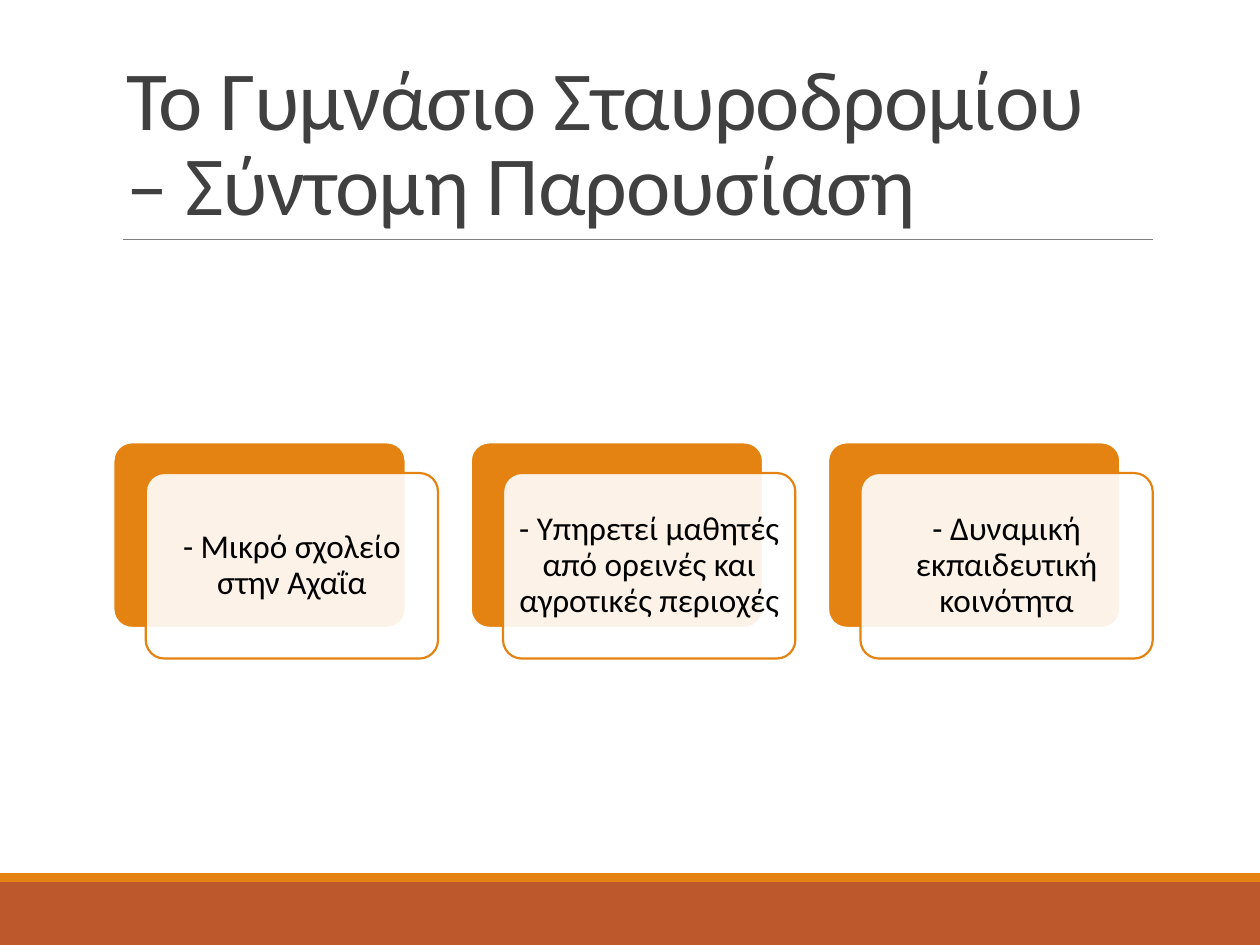
import pptx
import pptx.util
import pptx.dml.color
import pptx.enum.shapes
import pptx.enum.text
import pptx.oxml.ns
import lxml.etree

Pt = pptx.util.Pt
SHAPES = pptx.enum.shapes.MSO_SHAPE
ANCHOR = pptx.enum.text.MSO_ANCHOR
ALIGN = pptx.enum.text.PP_ALIGN

TITLE = "Το Γυμνάσιο Σταυροδρομίου\v– Σύντομη Παρουσίαση"
CARDS = [
    "- Μικρό σχολείο στην Αχαΐα",
    "- Υπηρετεί μαθητές από ορεινές και αγροτικές περιοχές",
    "- Δυναμική εκπαιδευτική κοινότητα",
]
COLORS = {
    "orange": "E48312",
    "rust": "BD582C",
    "title": "404040",
    "rule": "808080",
    "text": "000000",
    "white": "FFFFFF",
}
FONT = "Calibri"
PAGE_WIDTH, PAGE_HEIGHT = 720, 540
CARD_LEFT, CARD_TOP = 64.8, 252.8
CARD_WIDTH, CARD_HEIGHT = 167, 106
CARD_PITCH = 204.2
SHIFT_X, SHIFT_Y = 18.5, 17.5


def color(name):
    return pptx.dml.color.RGBColor.from_string(COLORS[name])


def add_box(page, kind, left, top, width, height, fill, line=None):
    box = page.shapes.add_shape(kind, Pt(left), Pt(top), Pt(width), Pt(height))
    box.shadow.inherit = False
    box.fill.solid()
    box.fill.fore_color.rgb = color(fill)
    if line:
        box.line.color.rgb = color(line)
        box.line.width = Pt(1.25)
        box.adjustments[0] = 0.1
    else:
        box.line.fill.background()
    return box


def format_text(frame, size, name, spacing):
    for para in frame.paragraphs:
        para.line_spacing = spacing
        for span in para.runs:
            span.font.name = FONT
            span.font.size = Pt(size)
            span.font.color.rgb = color(name)


def add_title(page):
    title = page.shapes.title
    title.left, title.top = Pt(64.8), Pt(22.5)
    title.width, title.height = Pt(594), Pt(114.3)
    frame = title.text_frame
    frame.text = TITLE
    frame.word_wrap = True
    frame.auto_size = pptx.enum.text.MSO_AUTO_SIZE.NONE
    frame.vertical_anchor = ANCHOR.BOTTOM
    format_text(frame, 48, "title", 0.85)
    for para in frame.paragraphs:
        para.alignment = ALIGN.LEFT
        for span in para.runs:
            span.font._element.set("spc", "-50")


def add_rule(page):
    rule = page.shapes.add_connector(
        pptx.enum.shapes.MSO_CONNECTOR.STRAIGHT, Pt(70.5), Pt(136.8), Pt(658.8), Pt(136.8))
    rule.line.color.rgb = color("rule")
    rule.line.width = Pt(0.5)
    lxml.etree.SubElement(rule._element.spPr, pptx.oxml.ns.qn("a:effectLst"))


def add_card(page, left, text):
    add_box(page, SHAPES.ROUNDED_RECTANGLE, left, CARD_TOP,
            CARD_WIDTH, CARD_HEIGHT, "orange", "white")
    front = add_box(page, SHAPES.ROUNDED_RECTANGLE, left + SHIFT_X, CARD_TOP + SHIFT_Y,
                    CARD_WIDTH, CARD_HEIGHT, "white", "orange")
    fill = front._element.spPr.find(pptx.oxml.ns.qn("a:solidFill"))
    lxml.etree.SubElement(fill[0], pptx.oxml.ns.qn("a:alpha"), val="90000")
    frame = front.text_frame
    frame.text = text
    frame.word_wrap = True
    frame.vertical_anchor = ANCHOR.MIDDLE
    frame.margin_left = frame.margin_right = Pt(2.7)
    frame.margin_top = frame.margin_bottom = Pt(2.7)
    frame.paragraphs[0].alignment = ALIGN.CENTER
    format_text(frame, 19, "text", 0.9)


def main():
    deck = pptx.Presentation()
    deck.slide_width, deck.slide_height = Pt(PAGE_WIDTH), Pt(PAGE_HEIGHT)
    page = deck.slides.add_slide(deck.slide_layouts[5])
    add_box(page, SHAPES.RECTANGLE, 0, 504, PAGE_WIDTH, 36, "rust")
    add_box(page, SHAPES.RECTANGLE, 0, 499, PAGE_WIDTH, 5, "orange")
    add_rule(page)
    add_title(page)
    for index, text in enumerate(CARDS):
        add_card(page, CARD_LEFT + index * CARD_PITCH, text)
    deck.save("out.pptx")


if __name__ == "__main__":
    main()
